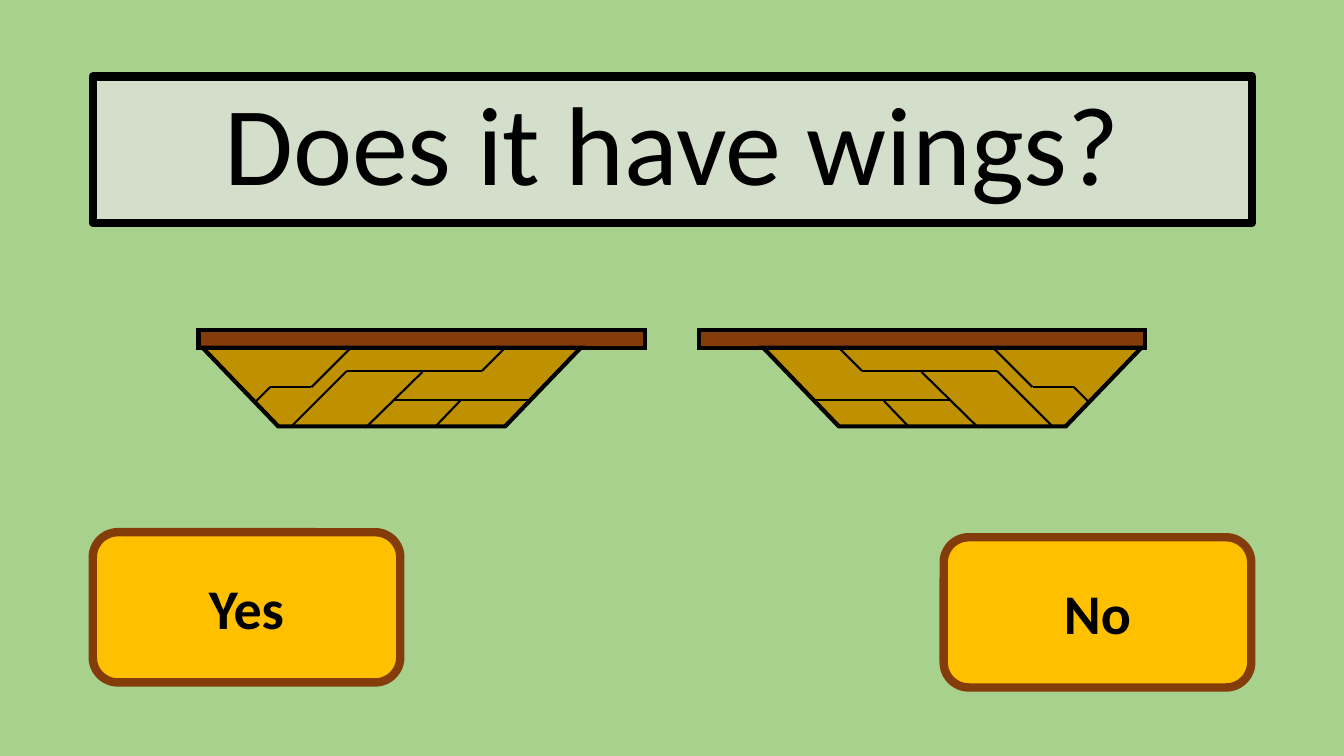
from dataclasses import dataclass

import lxml.etree
import pptx
import pptx.dml.color
import pptx.enum.shapes
import pptx.enum.text
import pptx.oxml.ns
import pptx.util

Inches = pptx.util.Inches
Pt = pptx.util.Pt
Shapes = pptx.enum.shapes.MSO_SHAPE
qn = pptx.oxml.ns.qn


@dataclass(frozen=True)
class Theme:
    font: str = "Calibri"
    background: str = "A9D18E"
    panel: str = "E7E6E6"
    button: str = "FFC000"
    bark: str = "843C0B"
    wing: str = "BF9000"
    ink: str = "000000"
    question_size: int = 80
    button_size: int = 40
    thick: float = 6
    outline: float = 3
    vein: float = 1.5


THEME = Theme()
SLIDE_WIDTH = 13.33
SLIDE_HEIGHT = 7.5

VEINS = [
    ((8.08, 3.97), (9.43, 3.97)),
    ((8.55, 3.68), (9.89, 3.68)),
    ((10.25, 3.84), (10.65, 3.84)),
    ((9.14, 3.69), (9.69, 4.23)),
    ((8.76, 3.97), (9.01, 4.23)),
    ((8.55, 3.68), (8.32, 3.45)),
    ((9.89, 3.68), (10.44, 4.23)),
    ((10.24, 3.84), (9.85, 3.45)),
    ((10.65, 3.84), (10.8, 3.99)),
]


def rgb(color):
    return pptx.dml.color.RGBColor.from_string(color)


def add_box(shapes, kind, box, fill, line, width):
    shape = shapes.add_shape(kind, *map(Inches, box))
    shape.shadow.inherit = False
    shape.fill.solid()
    shape.fill.fore_color.rgb = rgb(fill)
    shape.line.color.rgb = rgb(line)
    shape.line.width = Pt(width)
    return shape


def set_text(shape, text, size, bold=False, line_spacing=1.0):
    frame = shape.text_frame
    frame.word_wrap = True
    frame.vertical_anchor = pptx.enum.text.MSO_ANCHOR.MIDDLE
    paragraph = frame.paragraphs[0]
    paragraph.text = text
    paragraph.alignment = pptx.enum.text.PP_ALIGN.CENTER
    paragraph.line_spacing = line_spacing
    paragraph.font.name = THEME.font
    paragraph.font.size = Pt(size)
    paragraph.font.bold = bold
    paragraph.font.color.rgb = rgb(THEME.ink)


def set_opacity(shape, percent):
    color = shape.fill._xPr.find(qn("a:solidFill"))[0]
    lxml.etree.SubElement(color, qn("a:alpha")).set("val", str(percent * 1000))


def set_miter(shape):
    line = shape.line._get_or_add_ln()
    lxml.etree.SubElement(line, qn("a:miter")).set("lim", "800000")


def add_question(slide, text):
    box = (0.92, 0.76, 11.5, 1.45)
    panel = add_box(slide.shapes, Shapes.ROUNDED_RECTANGLE, box,
                    THEME.panel, THEME.ink, THEME.thick)
    panel.adjustments[0] = 0
    set_opacity(panel, 70)
    set_text(panel, text, THEME.question_size, line_spacing=0.9)


def add_button(slide, text, left, top):
    button = add_box(slide.shapes, Shapes.ROUNDED_RECTANGLE, (left, top, 3.05, 1.49),
                     THEME.button, THEME.bark, THEME.thick)
    set_text(button, text, THEME.button_size, bold=True)


def add_vein(shapes, start, end):
    connector = shapes.add_connector(pptx.enum.shapes.MSO_CONNECTOR.STRAIGHT,
                                     *map(Inches, (*start, *end)))
    connector.line.color.rgb = rgb(THEME.ink)
    connector.line.width = Pt(THEME.vein)
    properties = connector._element.find(qn("p:spPr"))
    lxml.etree.SubElement(properties, qn("a:effectLst"))


def add_wing(slide, mirrored):
    def place(x, width=0):
        return SLIDE_WIDTH - x - width if mirrored else x

    shapes = slide.shapes.add_group_shape().shapes
    parts = [
        (Shapes.RECTANGLE, (place(6.93, 4.43), 3.27, 4.43, 0.18), THEME.bark),
        (Shapes.FLOWCHART_MANUAL_OPERATION, (place(7.57, 3.75), 3.45, 3.75, 0.78), THEME.wing),
    ]
    for kind, box, fill in parts:
        set_miter(add_box(shapes, kind, box, fill, THEME.ink, THEME.outline))
    for (start_x, start_y), (end_x, end_y) in VEINS:
        add_vein(shapes, (place(start_x), start_y), (place(end_x), end_y))


def main():
    presentation = pptx.Presentation()
    presentation.slide_width = Inches(SLIDE_WIDTH)
    presentation.slide_height = Inches(SLIDE_HEIGHT)
    slide = presentation.slides.add_slide(presentation.slide_layouts[6])
    slide.background.fill.solid()
    slide.background.fill.fore_color.rgb = rgb(THEME.background)

    add_button(slide, "Yes", 0.92, 5.28)
    add_question(slide, "Does it have wings?")
    add_button(slide, "No", 9.36, 5.33)
    for mirrored in (False, True):
        add_wing(slide, mirrored)

    presentation.save("out.pptx")


if __name__ == "__main__":
    main()
